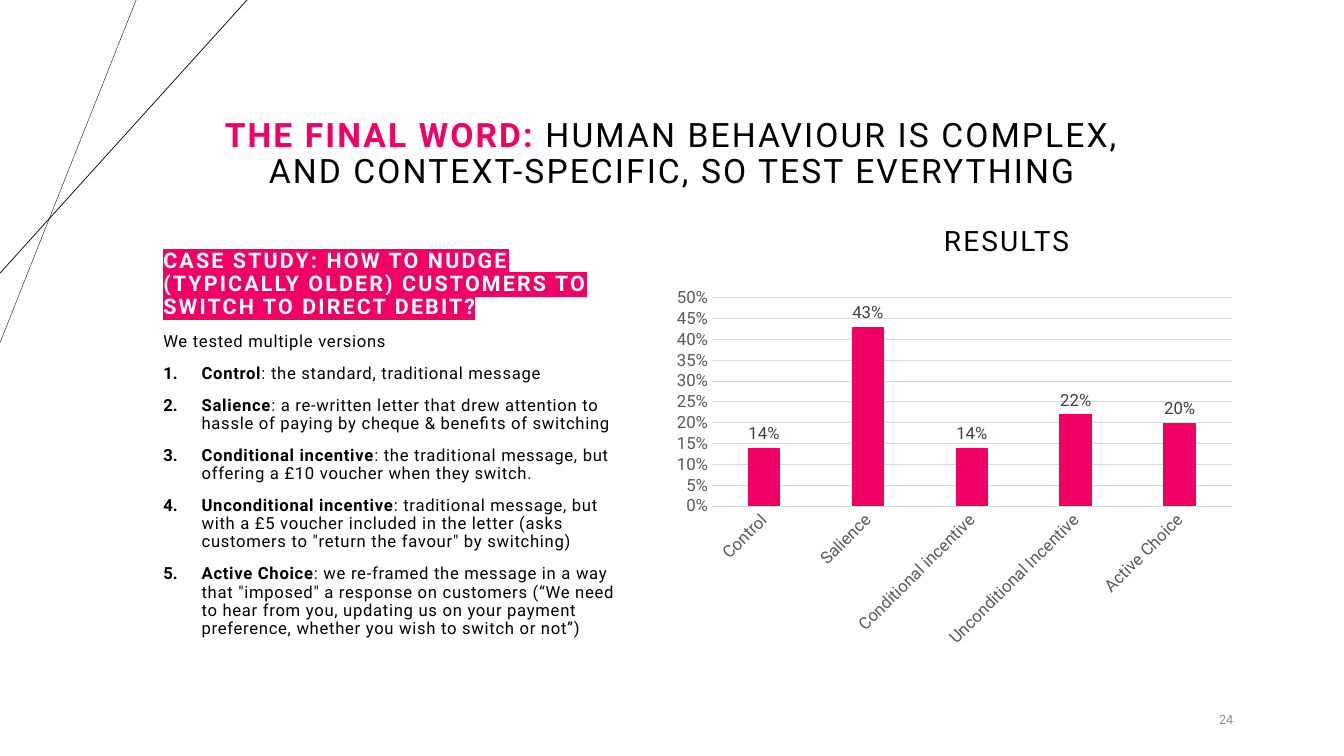
"""Build the closing slide: a direct debit case study beside a chart of its results."""
from lxml.etree import SubElement
from pptx import Presentation
from pptx.chart.data import CategoryChartData
from pptx.dml.color import RGBColor
from pptx.enum.chart import XL_CHART_TYPE, XL_LABEL_POSITION, XL_TICK_MARK
from pptx.enum.shapes import MSO_CONNECTOR
from pptx.enum.text import MSO_ANCHOR, MSO_AUTO_SIZE, PP_ALIGN
from pptx.oxml.ns import qn
from pptx.util import Inches, Pt

PINK = RGBColor(0xF1, 0x01, 0x66)
BLACK = RGBColor(0x00, 0x00, 0x00)
WHITE = RGBColor(0xFF, 0xFF, 0xFF)
PAGE_GRAY = RGBColor(0x8C, 0x8C, 0x8C)
AXIS_GRAY = RGBColor(0x59, 0x59, 0x59)
LABEL_GRAY = RGBColor(0x40, 0x40, 0x40)
GRID_GRAY = RGBColor(0xD9, 0xD9, 0xD9)
FONT = "Roboto"

TITLE_LEAD = "THE FINAL WORD: "
TITLE_REST = "HUMAN BEHAVIOUR IS COMPLEX, AND CONTEXT-SPECIFIC, SO TEST EVERYTHING"
CASE_HEADING = "CASE STUDY: HOW TO NUDGE (TYPICALLY OLDER) CUSTOMERS TO SWITCH TO DIRECT DEBIT?"
CASE_INTRO = "We tested multiple versions"
VERSIONS = [
    ("Control", ": the standard, traditional message"),
    ("Salience", ": a re-written letter that drew attention to hassle of paying by cheque "
                 "& benefits of switching"),
    ("Conditional incentive", ": the traditional message, but offering a £10 voucher "
                              "when they switch."),
    ("Unconditional incentive", ": traditional message, but with a £5 voucher included in the "
                                "letter (asks customers to \"return the favour\" by switching)"),
    ("Active Choice", ": we re-framed the message in a way that \"imposed\" a response on "
                      "customers (“We need to hear from you, updating us on your payment "
                      "preference, whether you wish to switch or not”)"),
]
RESULTS_HEADING = "RESULTS"
RESULTS = {
    "Control": 0.14,
    "Salience": 0.43,
    "Conditional incentive": 0.14,
    "Unconditional Incentive": 0.22,
    "Active Choice": 0.20,
}
PAGE_NUMBER = "24"

SLIDE_SIZE = (Inches(13.33), Inches(7.5))
TITLE_AREA = (15.45, 10.8, 69.09, 19.33)
CASE_AREA = (11.4, 32.4, 35.26, 54.67)
RESULTS_AREA = (63, 22.67, 23.78, 12)
CHART_AREA = (49.5, 37.07, 43, 49.6)
PAGE_AREA = (70, 92.53, 22.5, 5.33)
CORNER_LINES = [((10.13, 0, 0, 45.33), 0.25), ((18.38, 0, 0, 36.13), 0.5)]


def place(shares):
    """Turn percentages of the slide's width and height into lengths."""
    return [int(SLIDE_SIZE[i % 2] * share / 100) for i, share in enumerate(shares)]


def add_text(paragraph, text, size, color=BLACK, bold=False, spacing=0, highlight=None):
    """Append one formatted run to a paragraph."""
    run = paragraph.add_run()
    run.text = text
    font = run.font
    font.size, font.bold = Pt(size), bold
    font.color.rgb = color
    properties = run._r.get_or_add_rPr()
    if spacing:
        properties.set("spc", str(int(spacing * 100)))
    if highlight is not None:
        marker = SubElement(properties, qn("a:highlight"))
        SubElement(marker, qn("a:srgbClr")).set("val", str(highlight))
    font.name = FONT


def format_paragraph(paragraph, align=PP_ALIGN.LEFT, before=0, line_spacing=0.9, numbered=False):
    """Set spacing, alignment and numbering of a paragraph."""
    properties = paragraph._p.get_or_add_pPr()
    indent = Inches(0.38) if numbered else 0
    properties.set("marL", str(indent))
    properties.set("indent", str(-indent))
    if numbered:
        SubElement(properties, qn("a:buFont")).set("typeface", "+mj-lt")
        SubElement(properties, qn("a:buAutoNum")).set("type", "arabicPeriod")
    else:
        SubElement(properties, qn("a:buNone"))
    paragraph.alignment = align
    paragraph.line_spacing = line_spacing
    paragraph.space_before = Pt(before)
    return paragraph


def prepare_box(shape, area, anchor):
    """Move a text shape to its area and return its text frame."""
    shape.left, shape.top, shape.width, shape.height = place(area)
    frame = shape.text_frame
    frame.word_wrap = True
    frame.auto_size = MSO_AUTO_SIZE.NONE
    frame.vertical_anchor = anchor
    return frame


def add_corner_lines(slide):
    """Draw the two thin lines across the top left corner."""
    for ends, width in CORNER_LINES:
        line = slide.shapes.add_connector(MSO_CONNECTOR.STRAIGHT, *place(ends))
        line.line.color.rgb = BLACK
        line.line.width = Pt(width)
        SubElement(line._element.spPr, qn("a:effectLst"))


def add_case_study(shape):
    """Fill the body with the case study and its numbered versions."""
    frame = prepare_box(shape, CASE_AREA, MSO_ANCHOR.TOP)
    heading = format_paragraph(frame.paragraphs[0])
    add_text(heading, CASE_HEADING, 15.3, color=WHITE, bold=True, spacing=1.5, highlight=PINK)
    intro = format_paragraph(frame.add_paragraph(), before=10)
    add_text(intro, CASE_INTRO, 11.9, spacing=0.5)
    for name, description in VERSIONS:
        item = format_paragraph(frame.add_paragraph(), before=10, numbered=True)
        add_text(item, name, 11.9, bold=True, spacing=0.5)
        add_text(item, description, 11.9, spacing=0.5)


def format_font(font, size, color):
    """Give chart text its font, size and colour."""
    font.name, font.size = FONT, Pt(size)
    font.color.rgb = color


def add_results_chart(slide):
    """Add the column chart of results."""
    data = CategoryChartData(number_format="0%")
    data.categories = list(RESULTS)
    data.add_series("Series 1", list(RESULTS.values()))
    chart = slide.shapes.add_chart(
        XL_CHART_TYPE.COLUMN_CLUSTERED, *place(CHART_AREA), data).chart
    chart.has_legend = chart.has_title = False
    format_font(chart.font, 10, BLACK)

    for axis in (chart.category_axis, chart.value_axis):
        axis.major_tick_mark = axis.minor_tick_mark = XL_TICK_MARK.NONE
        format_font(axis.tick_labels.font, 12, AXIS_GRAY)
    categories, values = chart.category_axis, chart.value_axis
    categories.has_major_gridlines = False
    categories._element.find(qn("c:txPr")).find(qn("a:bodyPr")).set("rot", "-2700000")
    values.minimum_scale, values.maximum_scale, values.major_unit = 0, 0.5, 0.05
    values.tick_labels.number_format = "0%"
    values.tick_labels.number_format_is_linked = False
    values.format.line.fill.background()
    for line in (categories.format.line, values.major_gridlines.format.line):
        line.color.rgb = GRID_GRAY
        line.width = Pt(0.75)

    plot = chart.plots[0]
    plot.gap_width, plot.overlap, plot.vary_by_categories = 219, -27, False
    series = plot.series[0]
    series.format.fill.solid()
    series.format.fill.fore_color.rgb = PINK
    labels = series.data_labels
    labels.show_value = True
    labels.position = XL_LABEL_POSITION.OUTSIDE_END
    labels.number_format, labels.number_format_is_linked = "0%", False
    format_font(labels.font, 12, LABEL_GRAY)


def main():
    """Build and save the slide."""
    presentation = Presentation()
    presentation.slide_width, presentation.slide_height = SLIDE_SIZE
    slide = presentation.slides.add_slide(presentation.slide_layouts[1])
    add_corner_lines(slide)

    title_frame = prepare_box(slide.shapes.title, TITLE_AREA, MSO_ANCHOR.MIDDLE)
    title = format_paragraph(title_frame.paragraphs[0], align=PP_ALIGN.CENTER)
    add_text(title, TITLE_LEAD, 24, color=PINK, bold=True, spacing=1.5)
    add_text(title, TITLE_REST, 24, spacing=1.5)

    add_case_study(slide.placeholders[1])

    results_box = slide.shapes.add_textbox(*place(RESULTS_AREA))
    results_frame = prepare_box(results_box, RESULTS_AREA, MSO_ANCHOR.BOTTOM)
    results = format_paragraph(results_frame.paragraphs[0], align=PP_ALIGN.CENTER)
    add_text(results, RESULTS_HEADING, 20, spacing=1.5)
    add_results_chart(slide)

    page_box = slide.shapes.add_textbox(*place(PAGE_AREA))
    page_frame = prepare_box(page_box, PAGE_AREA, MSO_ANCHOR.MIDDLE)
    page = format_paragraph(page_frame.paragraphs[0], align=PP_ALIGN.RIGHT, line_spacing=1.0)
    add_text(page, PAGE_NUMBER, 9, color=PAGE_GRAY)
    presentation.save("out.pptx")


if __name__ == "__main__":
    main()
